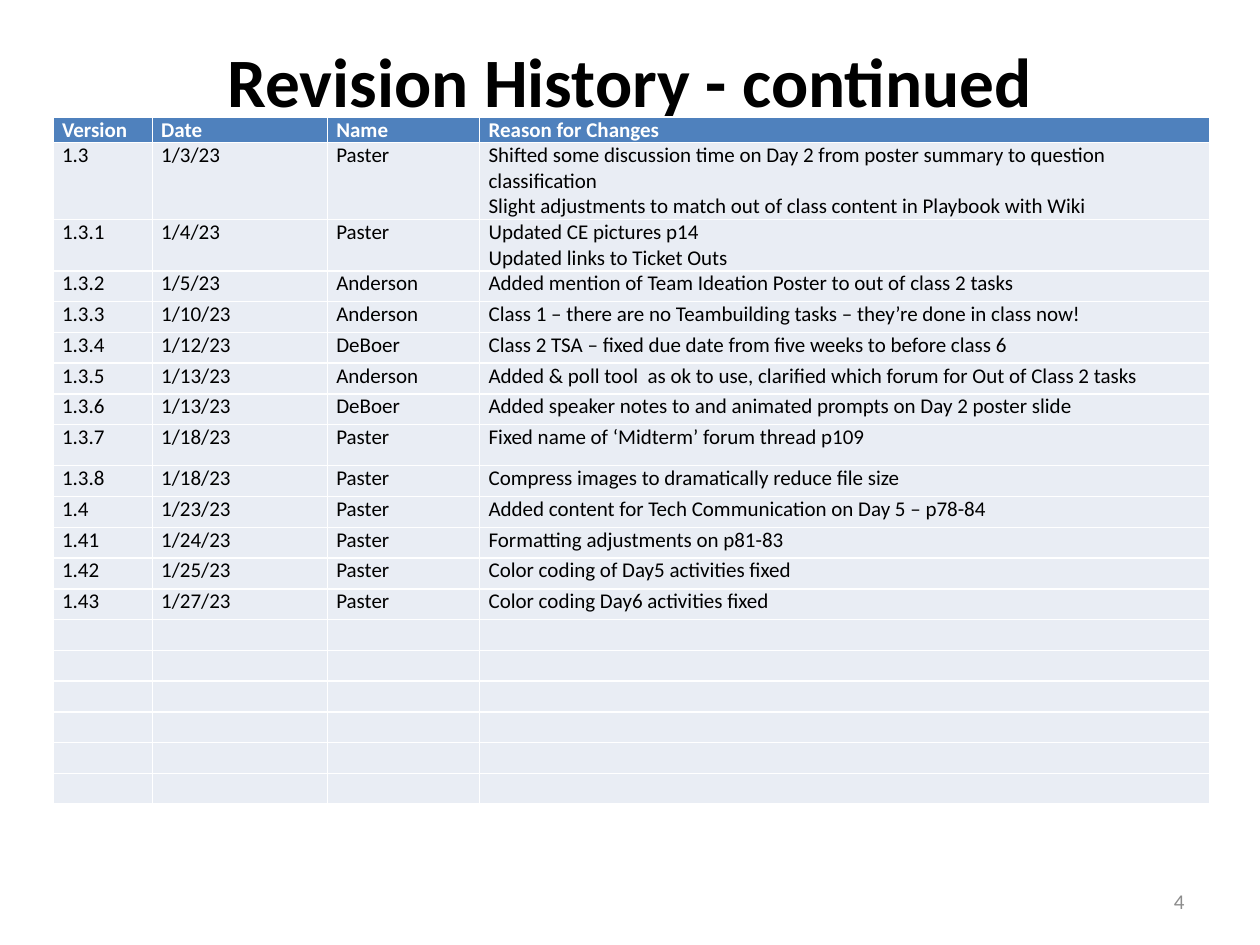
from typing import NamedTuple

from lxml.etree import SubElement
from pptx import Presentation
from pptx.dml.color import RGBColor
from pptx.enum.text import MSO_ANCHOR, PP_ALIGN
from pptx.oxml.ns import qn
from pptx.util import Cm, Pt

BLACK = RGBColor(0x00, 0x00, 0x00)
WHITE = RGBColor(0xFF, 0xFF, 0xFF)
GREY = RGBColor(0x8C, 0x8C, 0x8C)
HEADER_BLUE = RGBColor(0x4F, 0x81, 0xBD)
ROW_TINT = RGBColor(0xE9, 0xED, 0xF4)

FONT = "Calibri"
TABLE_SIZE = 12
ROW_HEIGHT = 0.62
EMPTY_ROWS = 6
COLUMN_WIDTHS = (2.0, 3.53, 3.07, 14.71)
CELL_MARGINS = {"margin_left": Cm(0.18), "margin_right": Cm(0.18),
                "margin_top": 0, "margin_bottom": 0}


class Revision(NamedTuple):
    version: str = ""
    date: str = ""
    name: str = ""
    reason: str = ""
    height: float = ROW_HEIGHT


HEADINGS = Revision("Version", "Date", "Name", "Reason for Changes", 0.51)
REVISIONS = [
    Revision("1.3", "1/3/23", "Paster",
             "Shifted some discussion time on Day 2 from poster summary to question classification\n"
             "Slight adjustments to match out of class content in Playbook with Wiki", 1.54),
    Revision("1.3.1", "1/4/23", "Paster",
             "Updated CE pictures p14\nUpdated links to Ticket Outs", 1.03),
    Revision("1.3.2", "1/5/23", "Anderson",
             "Added mention of Team Ideation Poster to out of class 2 tasks"),
    Revision("1.3.3", "1/10/23", "Anderson",
             "Class 1 – there are no Teambuilding tasks – they’re done in class now!"),
    Revision("1.3.4", "1/12/23", "DeBoer",
             "Class 2 TSA – fixed due date from five weeks to before class 6"),
    Revision("1.3.5", "1/13/23", "Anderson",
             "Added & poll tool  as ok to use, clarified which forum for Out of Class 2 tasks"),
    Revision("1.3.6", "1/13/23", "DeBoer",
             "Added speaker notes to and animated prompts on Day 2 poster slide"),
    Revision("1.3.7", "1/18/23", "Paster", "Fixed name of ‘Midterm’ forum thread p109", 0.83),
    Revision("1.3.8", "1/18/23", "Paster", "Compress images to dramatically reduce file size"),
    Revision("1.4", "1/23/23", "Paster",
             "Added content for Tech Communication on Day 5 – p78-84"),
    Revision("1.41", "1/24/23", "Paster", "Formatting adjustments on p81-83"),
    Revision("1.42", "1/25/23", "Paster", "Color coding of Day5 activities fixed"),
    Revision("1.43", "1/27/23", "Paster", "Color coding Day6 activities fixed"),
]


def set_values(target, values: dict) -> None:
    for name, value in values.items():
        setattr(target, name, value)


def write_text(frame, text: str, size: float, color: RGBColor, bold: bool = False,
               align: PP_ALIGN = PP_ALIGN.LEFT) -> None:
    """Fill a text frame, one paragraph per line of text."""
    frame.text = text
    for para in frame.paragraphs:
        para.alignment = align
        for span in para.runs:
            set_values(span.font, {"name": FONT, "size": Pt(size), "bold": bold})
            span.font.color.rgb = color
        if not para.runs:
            # An empty cell needs a text size too, or its row grows
            SubElement(para._p, qn("a:endParaRPr"), sz=str(size * 100))


def add_title(page, text: str) -> None:
    title = page.shapes.title
    set_values(title, {"left": Cm(1.27), "top": Cm(0.76),
                       "width": Cm(22.86), "height": Cm(3.18)})
    set_values(title.text_frame, {"vertical_anchor": MSO_ANCHOR.TOP, "margin_top": 0})
    write_text(title.text_frame, text, 39.6, BLACK, True, PP_ALIGN.CENTER)


def add_revision_table(page, records: list[Revision]) -> None:
    frame = page.shapes.add_table(len(records), len(COLUMN_WIDTHS), Cm(1.07), Cm(2.36),
                                  Cm(sum(COLUMN_WIDTHS)),
                                  Cm(sum(record.height for record in records)))
    table = frame.table
    table.horz_banding = False
    for column, width in zip(table.columns, COLUMN_WIDTHS):
        column.width = Cm(width)
    for index, (row, record) in enumerate(zip(table.rows, records)):
        row.height = Cm(record.height)
        is_header = index == 0
        for cell, text in zip(row.cells, record):
            set_values(cell, CELL_MARGINS)
            cell.fill.solid()
            cell.fill.fore_color.rgb = HEADER_BLUE if is_header else ROW_TINT
            write_text(cell.text_frame, text, TABLE_SIZE,
                       WHITE if is_header else BLACK, is_header)


def add_page_number(page, number: str) -> None:
    box = page.shapes.add_textbox(Cm(18.21), Cm(17.65), Cm(5.92), Cm(1.02))
    set_values(box.text_frame, {"word_wrap": True, "vertical_anchor": MSO_ANCHOR.MIDDLE})
    write_text(box.text_frame, number, 12, GREY, align=PP_ALIGN.RIGHT)


def main() -> None:
    deck = Presentation()
    set_values(deck, {"slide_width": Cm(25.4), "slide_height": Cm(19.05)})
    page = deck.slides.add_slide(deck.slide_layouts.get_by_name("Title Only"))

    add_title(page, "Revision History - continued")
    add_revision_table(page, [HEADINGS, *REVISIONS, *[Revision()] * EMPTY_ROWS])
    add_page_number(page, "4")

    deck.save("out.pptx")


if __name__ == "__main__":
    main()
